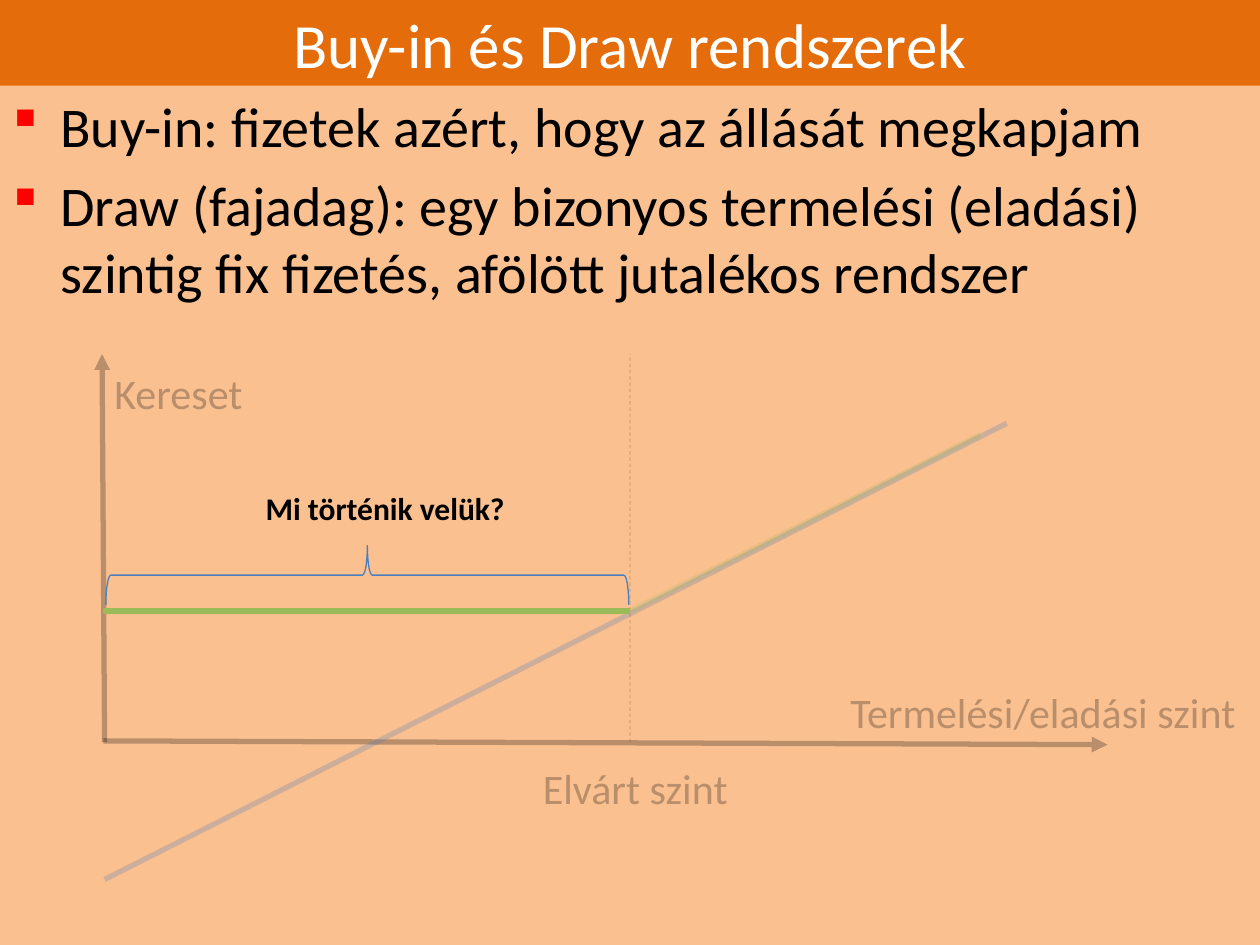
from lxml.etree import SubElement
from pptx import Presentation
from pptx.dml.color import RGBColor
from pptx.enum.dml import MSO_LINE
from pptx.enum.shapes import MSO_CONNECTOR, MSO_SHAPE
from pptx.enum.text import MSO_ANCHOR, MSO_AUTO_SIZE, PP_ALIGN
from pptx.oxml.ns import qn
from pptx.util import Inches, Pt

WIDTH, HEIGHT, TITLE_HEIGHT = 10, 7.5, 0.68
FONT = "Calibri"
BLACK, WHITE, RED = "000000", "FFFFFF", "FF0000"
PEACH, ORANGE, BLUE, GREEN = "FAC090", "E46C0A", "4B7EBC", "9BBB59"
FADED = 25  # opacity in percent

TITLE = "Buy-in és Draw rendszerek"
BULLETS = [
    "Buy-in: fizetek azért, hogy az állását megkapjam",
    "Draw (fajadag): egy bizonyos termelési (eladási) szintig fix fizetés, "
    "afölött jutalékos rendszer",
]

# Landmarks of the diagram
AXIS_X, AXIS_TOP, AXIS_Y = 0.82, 2.81, 5.89
TARGET_X, FIXED_PAY_Y = WIDTH / 2, 4.85

# start, end, colour, width, opacity, dashed, arrow
LINES = [
    ((AXIS_X, AXIS_Y - 0.01), (8.79, 5.91), BLACK, 3, FADED, False, True),
    ((0.83, AXIS_Y), (0.81, AXIS_TOP), BLACK, 3, FADED, False, True),
    ((0.83, 6.98), (7.99, 3.36), BLUE, 3, 26, False, False),
    ((TARGET_X, AXIS_Y), (TARGET_X, AXIS_TOP), BLACK, 0.5, FADED, True, False),
    ((AXIS_X, FIXED_PAY_Y), (TARGET_X, FIXED_PAY_Y), GREEN, 3, 100, False, False),
    ((7.78, 3.45), (TARGET_X, FIXED_PAY_Y), GREEN, 3, 23, False, False),
]

# text, left, top, width, height, size, bold, opacity
LABELS = [
    ("Termelési/eladási szint", 6.65, 5.4, 3.55, 0.5, 24, False, FADED),
    ("Elvárt szint", 4.21, 6, 1.73, 0.5, 24, False, FADED),
    ("Mi történik velük?", 2.01, 3.83, 2.28, 0.4, 18, True, 100),
    ("Kereset", 0.81, 2.87, 3.55, 0.5, 24, False, FADED),
]


def rgb(value):
    return RGBColor.from_string(value)


def set_opacity(element, percent):
    if percent < 100:
        for color in element.iter(qn("a:srgbClr")):
            SubElement(color, qn("a:alpha"), val=str(percent * 1000))


def place(shape, left, top, width, height):
    shape.left, shape.top = Inches(left), Inches(top)
    shape.width, shape.height = Inches(width), Inches(height)


def format_text(paragraph, size, color, bold=False):
    for run in paragraph.runs:
        run.font.name, run.font.size, run.font.bold = FONT, Pt(size), bold
        run.font.color.rgb = rgb(color)


def add_bullet(paragraph, indent=0.38):
    properties = paragraph._p.get_or_add_pPr()
    properties.set("marL", str(Inches(indent)))
    properties.set("indent", str(-Inches(indent)))
    space = SubElement(properties, qn("a:spcBef"))
    SubElement(space, qn("a:spcPct"), val="20000")
    color = SubElement(properties, qn("a:buClr"))
    SubElement(color, qn("a:srgbClr"), val=RED)
    SubElement(properties, qn("a:buFont"), typeface="Wingdings")
    SubElement(properties, qn("a:buChar"), char="§")


def add_line(slide, start, end, color, width, opacity, dashed, arrow):
    connector = slide.shapes.add_connector(
        MSO_CONNECTOR.STRAIGHT, *(Inches(value) for value in start + end))
    line = connector.line
    line.color.rgb, line.width = rgb(color), Pt(width)
    line.dash_style = MSO_LINE.DASH if dashed else MSO_LINE.SOLID
    properties = connector._element.spPr
    set_opacity(properties, opacity)
    if arrow:
        SubElement(line._get_or_add_ln(), qn("a:tailEnd"), type="triangle")
    SubElement(properties, qn("a:effectLst"))


def add_label(slide, text, left, top, width, height, size, bold, opacity):
    box = slide.shapes.add_textbox(
        *(Inches(value) for value in (left, top, width, height)))
    frame = box.text_frame
    frame.word_wrap = True
    frame.auto_size = MSO_AUTO_SIZE.SHAPE_TO_FIT_TEXT
    frame.text = text
    format_text(frame.paragraphs[0], size, BLACK, bold)
    set_opacity(box._element, opacity)


def main():
    presentation = Presentation()
    presentation.slide_width = Inches(WIDTH)
    presentation.slide_height = Inches(HEIGHT)
    slide = presentation.slides.add_slide(presentation.slide_layouts[1])
    slide.background.fill.solid()
    slide.background.fill.fore_color.rgb = rgb(PEACH)

    # Title band
    title = slide.shapes.title
    place(title, 0, 0, WIDTH, TITLE_HEIGHT)
    title.fill.solid()
    title.fill.fore_color.rgb = rgb(ORANGE)
    title.text_frame.text = TITLE
    title.text_frame.auto_size = MSO_AUTO_SIZE.NONE
    title.text_frame.vertical_anchor = MSO_ANCHOR.MIDDLE
    heading = title.text_frame.paragraphs[0]
    heading.alignment = PP_ALIGN.CENTER
    format_text(heading, 36, WHITE)

    # Bulleted text
    body = slide.placeholders[1]
    place(body, 0, TITLE_HEIGHT, WIDTH, HEIGHT - TITLE_HEIGHT)
    body.text_frame.text = "\n".join(BULLETS)
    body.text_frame.auto_size = MSO_AUTO_SIZE.NONE
    for paragraph in body.text_frame.paragraphs:
        add_bullet(paragraph)
        format_text(paragraph, 32, BLACK)

    # Diagram: axes, pay lines, brace and labels
    for line in LINES:
        add_line(slide, *line)
    brace = slide.shapes.add_shape(
        MSO_SHAPE.LEFT_BRACE, Inches(2.68), Inches(2.49), Inches(0.47), Inches(4.15))
    brace.rotation = 90
    brace.shadow.inherit = False
    brace.fill.background()
    brace.line.color.rgb, brace.line.width = rgb(BLUE), Pt(0.75)
    for label in LABELS:
        add_label(slide, *label)

    presentation.save("out.pptx")


if __name__ == "__main__":
    main()
